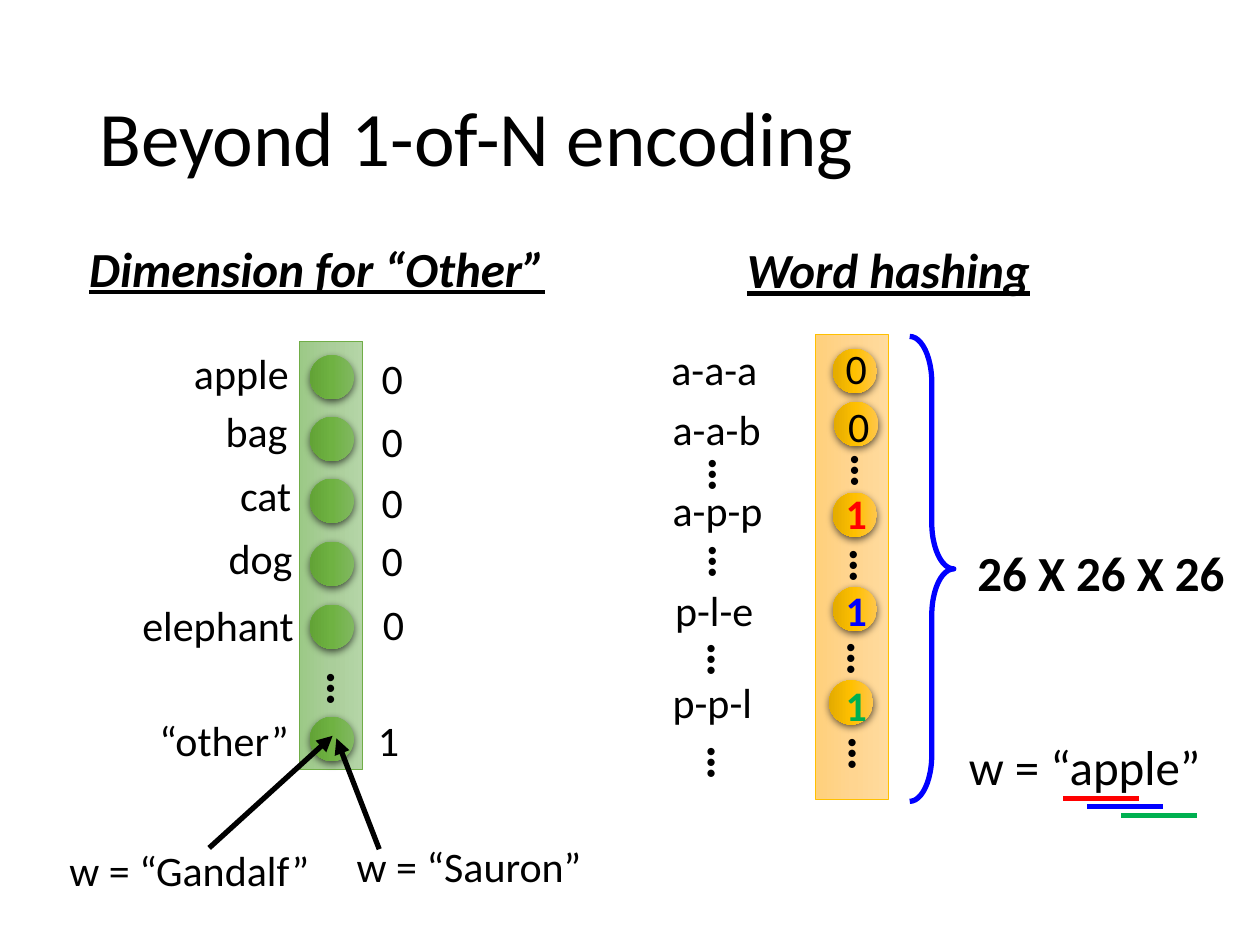
from lxml import etree
from pptx import Presentation
from pptx.dml.color import RGBColor
from pptx.enum.shapes import MSO_CONNECTOR as Connector, MSO_SHAPE as Shape
from pptx.enum.text import MSO_ANCHOR as Anchor, MSO_AUTO_SIZE as AutoSize, PP_ALIGN as Align
from pptx.oxml.ns import qn
from pptx.util import Inches, Pt

COLORS = {
    "black": "000000", "red": "FF0000", "blue": "0000FF", "green": "00B050",
    "amber line": "FFC000", "leaf line": "70AD47",
}
GRADIENTS = {
    "amber bar": ("FFDB9E", "FFD590", "FFD07C"),
    "amber dot": ("FFC64B", "FFC000", "E3AB00"),
    "leaf bar": ("B5D5A7", "AACE9A", "9CC987"),
    "leaf dot": ("81B861", "6FB242", "62A336"),
}
DOT = 0.35


class SlideBuilder:
    def __init__(self, slide, font="Calibri"):
        self.slide = slide
        self.font = font

    def text(self, words, left, top, width, height=0.5, size=24, color="black", align=None,
             bold=None, heading=False, rotation=0, wrap=True):
        box = self.slide.shapes.add_textbox(*map(Inches, (left, top, width, height)))
        box.rotation = rotation
        frame = box.text_frame
        frame.word_wrap = wrap
        frame.auto_size = AutoSize.SHAPE_TO_FIT_TEXT
        para = frame.paragraphs[0]
        para.alignment = align
        span = para.add_run()
        span.text = words
        font = span.font
        font.name, font.size = self.font, Pt(size)
        font.color.rgb = RGBColor.from_string(COLORS[color])
        font.bold = True if heading else bold
        if heading:
            font.italic = font.underline = True
        return box

    def title(self, words, left, top, width, height):
        box = self.text(words, left, top, width, height, size=44)
        frame = box.text_frame
        frame.auto_size = AutoSize.NONE
        frame.vertical_anchor = Anchor.MIDDLE
        frame.paragraphs[0].line_spacing = 0.9

    def ellipsis(self, left, top, width=0.4):
        self.text("…", left, top, width, 0.57, size=28, bold=True, rotation=90)

    def shape(self, kind, left, top, width, height, gradient=None, line=None, weight=0.5):
        shape = self.slide.shapes.add_shape(kind, *map(Inches, (left, top, width, height)))
        shape.shadow.inherit = False
        if gradient:
            shape.rotation = 90
            self.paint_gradient(shape, GRADIENTS[gradient])
        else:
            shape.fill.background()
        if line:
            shape.line.color.rgb = RGBColor.from_string(COLORS[line])
            shape.line.width = Pt(weight)
        else:
            shape.line.fill.background()
        return shape

    def paint_gradient(self, shape, colors):
        shape.fill.gradient()
        shape.fill.gradient_angle = 270  # counter-clockwise, so top to bottom
        stops = shape.fill._fill._gradFill.find(qn("a:gsLst"))
        for stop in list(stops):
            stops.remove(stop)
        for position, color in zip((0, 50000, 100000), colors):
            stop = etree.SubElement(stops, qn("a:gs"), pos=str(position))
            etree.SubElement(stop, qn("a:srgbClr"), val=color)

    def dot(self, left, top, gradient):
        dot = self.shape(Shape.OVAL, left, top, DOT, DOT, gradient)
        effects = dot._element.spPr.find(qn("a:effectLst"))
        shadow = etree.SubElement(effects, qn("a:outerShdw"), blurRad=str(Pt(4.5)),
                                  dist=str(Pt(1.5)), dir="5400000", rotWithShape="0")
        color = etree.SubElement(shadow, qn("a:srgbClr"), val=COLORS["black"])
        etree.SubElement(color, qn("a:alpha"), val="63000")

    def line(self, start, end, color, arrow=False):
        line = self.slide.shapes.add_connector(
            Connector.STRAIGHT, *map(Inches, (*start, *end)))
        line.line.color.rgb = RGBColor.from_string(COLORS[color])
        line.line.width = Pt(3)
        if arrow:
            etree.SubElement(line.line._get_or_add_ln(), qn("a:tailEnd"), type="triangle")
        etree.SubElement(line._element.spPr, qn("a:effectLst"))


def draw_hashing(page):
    page.text("Word hashing", 5.83, 1.85, 2.45, 0.57, size=28, heading=True, wrap=False)
    page.shape(Shape.RECTANGLE, 4.92, 4.21, 3.69, 0.58, "amber bar", "amber line")

    # Letter triples: label, its place, dot place, value place, value, colour
    triples = [
        ("a-a-a", 5.23, 2.68, 6.61, 2.77, 6.59, 2.67, "0", "black"),
        ("a-a-b", 5.24, 3.15, 6.62, 3.19, 6.61, 3.13, "0", "black"),
        ("a-p-p", 5.24, 3.80, 6.61, 3.91, 6.59, 3.82, "1", "red"),
        ("p-l-e", 5.26, 4.59, 6.61, 4.66, 6.59, 4.59, "1", "blue"),
        ("p-p-l", 5.24, 5.32, 6.58, 5.40, 6.59, 5.34, "1", "green"),
    ]
    for label, left, top, dot_left, dot_top, value_left, value_top, value, color in triples:
        page.text(label, left, top, 1.1)
        page.dot(dot_left, dot_top, "amber dot")
        page.text(value, value_left, value_top, 0.41, color=color, align=Align.CENTER,
                  bold=value == "1")

    # Gaps between the triples
    for place in [(5.58, 3.45), (5.58, 4.14), (5.57, 4.92), (5.57, 5.73),
                  (6.71, 3.42), (6.7, 4.17), (6.68, 4.91), (6.69, 5.66)]:
        page.ellipsis(*place)

    # Vector size
    brace = page.shape(Shape.RIGHT_BRACE, 7.22, 2.67, 0.35, 3.69, line="blue", weight=3)
    brace.adjustments[0] = 1.05
    brace.adjustments[1] = 0.5
    page.text("26 X 26 X 26", 7.66, 4.26, 2.17, 0.57, size=28, bold=True)

    # Sample word with its triples underlined
    page.text("w = “apple”", 7.59, 5.8, 2.08, 0.57, size=28)
    for left, top, color in [(8.44, 6.34, "red"), (8.63, 6.4, "blue"), (8.9, 6.47, "green")]:
        page.line((left, top), (left + 0.6, top), color)


def draw_other(page):
    page.text("Dimension for “Other”", 0.61, 1.84, 4, 0.57, size=28, heading=True, wrap=False)
    page.shape(Shape.RECTANGLE, 0.93, 4.16, 3.4, 0.5, "leaf bar", "leaf line")
    page.ellipsis(2.52, 5.18, 0.46)

    # Words: label, right edge, top, dot top, value place, value
    words = [
        ("apple", 2.39, 2.71, 2.82, 2.93, 2.75, "0"),
        ("bag", 2.38, 3.17, 3.31, 2.93, 3.25, "0"),
        ("cat", 2.41, 3.68, 3.80, 2.93, 3.73, "0"),
        ("dog", 2.42, 4.18, 4.30, 2.93, 4.19, "0"),
        ("elephant", 2.43, 4.71, 4.80, 2.94, 4.70, "0"),
        ("“other”", 2.39, 5.62, 5.69, 2.90, 5.62, "1"),
    ]
    label_width = 1.47
    for label, right, top, dot_top, value_left, value_top, value in words:
        page.text(label, right - label_width, top, label_width, align=Align.RIGHT)
        page.dot(2.46, dot_top, "leaf dot")
        page.text(value, value_left, value_top, 0.33)

    # Unknown words pointing at "other"
    page.text("w = “Gandalf” ", 0.3, 6.65, 2.48, align=Align.CENTER)
    page.text("w = “Sauron” ", 2.52, 6.62, 2.48, align=Align.CENTER)
    page.line((1.66, 6.73), (2.64, 5.84), "black", arrow=True)
    page.line((3.01, 6.74), (2.67, 5.86), "black", arrow=True)


def main():
    deck = Presentation()
    deck.slide_width, deck.slide_height = Inches(10), Inches(7.5)
    page = SlideBuilder(deck.slides.add_slide(deck.slide_layouts[6]))
    page.title("Beyond 1-of-N encoding", 0.69, 0.4, 8.62, 1.45)
    draw_hashing(page)
    draw_other(page)
    deck.save("out.pptx")


if __name__ == "__main__":
    main()
